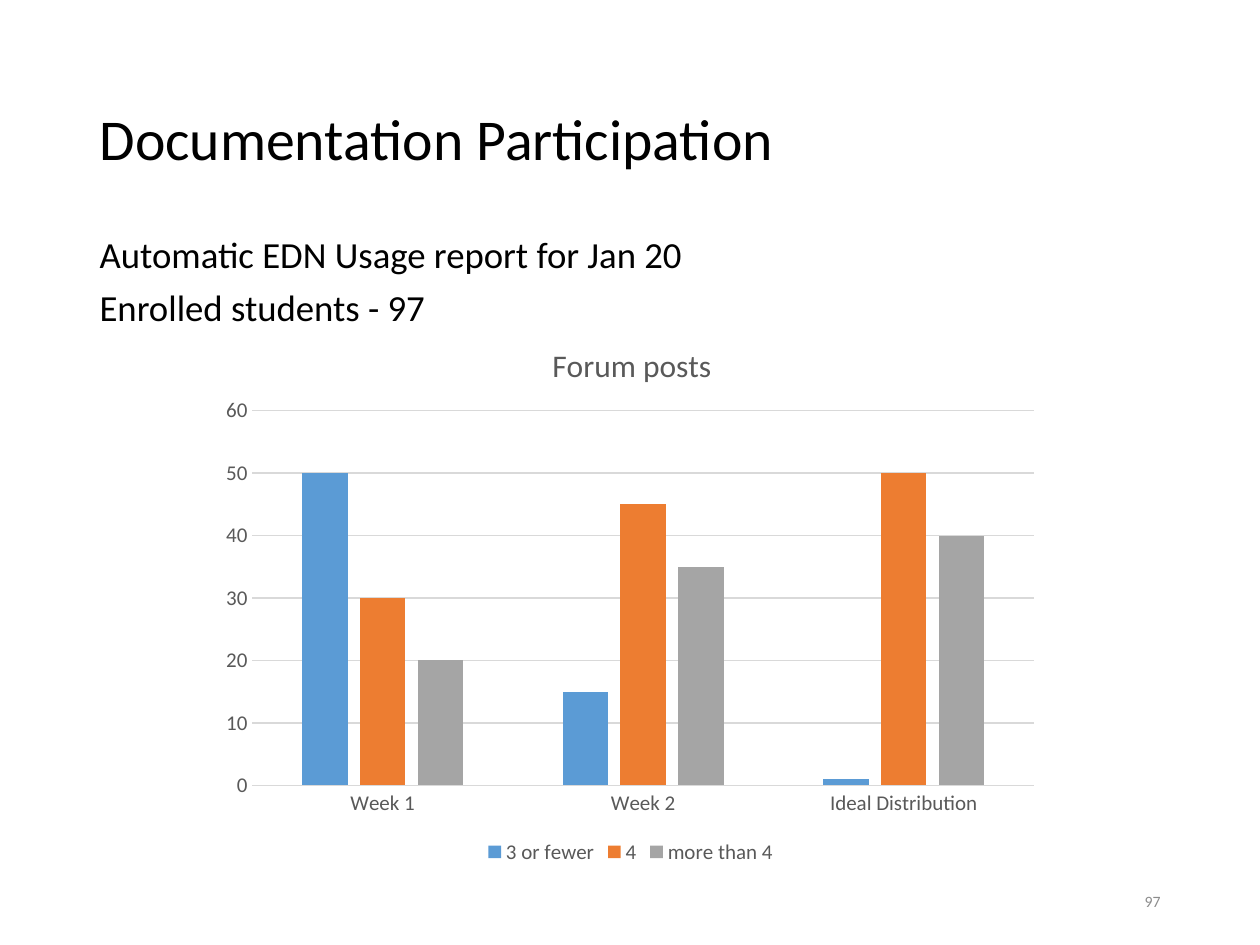
from lxml import etree
from pptx import Presentation
from pptx.chart.data import CategoryChartData
from pptx.dml.color import RGBColor
from pptx.enum.chart import XL_CHART_TYPE as ChartType, XL_LEGEND_POSITION as LegendPosition
from pptx.enum.chart import XL_TICK_MARK as TickMark
from pptx.enum.text import MSO_ANCHOR as Anchor, MSO_AUTO_SIZE as AutoSize, PP_ALIGN as Align
from pptx.oxml import parse_xml
from pptx.oxml.ns import nsdecls, qn
from pptx.util import Inches, Pt

TITLE = "Documentation Participation"
FACTS = ["Automatic EDN Usage report for Jan 20", "Enrolled students - 97"]
PAGE_NUMBER = "97"
CHART_TITLE = "Forum posts"
PERIODS = ["Week 1", "Week 2", "Ideal Distribution"]
POSTS = [
    ("3 or fewer", "5B9BD5", (50, 15, 1)),
    ("4", "ED7D31", (30, 45, 50)),
    ("more than 4", "A5A5A5", (20, 35, 40)),
]
FONT, BLACK, GRAY, RULE = "Calibri", "000000", "595959", "D9D9D9"


def color(target, value):
    """Color a font directly, or give a fill a solid color."""
    if hasattr(target, "solid"):
        target.solid()
        target.fore_color.rgb = RGBColor.from_string(value)
    else:
        target.color.rgb = RGBColor.from_string(value)


def style(font, size, value):
    font.name, font.size, font.bold = FONT, Pt(size), False
    color(font, value)


def place(shape, left, top, width, height):
    shape.left, shape.top = Inches(left), Inches(top)
    shape.width, shape.height = Inches(width), Inches(height)


def fill_text(shape, lines, size, value, align=Align.LEFT, anchor=Anchor.MIDDLE):
    frame = shape.text_frame
    frame.text = "\n".join(lines)
    frame.word_wrap, frame.auto_size = True, AutoSize.NONE
    frame.vertical_anchor = anchor
    for paragraph in frame.paragraphs:
        paragraph.alignment = align
        style(paragraph.runs[0].font, size, value)
    return frame.paragraphs


def manual_layout(**parts):
    """Chart layout in fractions of the chart area."""
    tags = "".join(f'<c:{key} val="{value}"/>' for key, value in parts.items())
    return parse_xml(f'<c:layout {nsdecls("c")}><c:manualLayout>{tags}</c:manualLayout></c:layout>')


def set_layout(parent, layout, index):
    for old in parent.findall(qn("c:layout")):
        parent.remove(old)
    parent.insert(index, layout)


def add_posts_chart(slide):
    data = CategoryChartData()
    data.categories = PERIODS
    for name, _, values in POSTS:
        data.add_series(name, values)
    chart = slide.shapes.add_chart(
        ChartType.COLUMN_CLUSTERED, Inches(1.67), Inches(2.46), Inches(6.67), Inches(4.44), data
    ).chart
    style(chart.font, 10, BLACK)

    chart.has_title = True
    heading = chart.chart_title
    heading.text_frame.text = CHART_TITLE
    style(heading.text_frame.paragraphs[0].runs[0].font, 18, GRAY)
    heading.include_in_layout = False
    set_layout(heading.format.fill and heading._element,
               manual_layout(xMode="edge", yMode="edge", x=0.4, y=0.05), 1)

    chart.has_legend = True
    chart.legend.position = LegendPosition.BOTTOM
    chart.legend.include_in_layout = False
    style(chart.legend.font, 12, GRAY)

    for axis in (chart.category_axis, chart.value_axis):
        axis.major_tick_mark = axis.minor_tick_mark = TickMark.NONE
        style(axis.tick_labels.font, 12, GRAY)
    chart.value_axis.format.line.fill.background()
    chart.value_axis.minimum_scale, chart.value_axis.maximum_scale = 0, 60
    chart.value_axis.major_unit = 10
    for line in (chart.category_axis.format.line, chart.value_axis.major_gridlines.format.line):
        color(line.fill, RULE)
        line.width = Pt(0.75)

    plot = chart.plots[0]
    plot.gap_width, plot.overlap, plot.vary_by_categories = 219, -27, False
    for series, (_, value, _) in zip(plot.series, POSTS):
        color(series.format.fill, value)
    plot_area = chart._chartSpace.find(".//" + qn("c:plotArea"))
    set_layout(plot_area, manual_layout(layoutTarget="inner", xMode="edge", yMode="edge",
                                        x=0.05, y=0.18, w=0.93, h=0.67), 0)


def main():
    deck = Presentation()
    deck.slide_width, deck.slide_height = Inches(10), Inches(7.5)
    slide = deck.slides.add_slide(deck.slide_layouts[1])

    title, body = slide.placeholders
    place(title, 0.69, 0.4, 8.62, 1.45)
    fill_text(title, [TITLE], 33, BLACK)[0].line_spacing = 0.9

    place(body, 0.69, 1.83, 8.62, 5.01)
    for fact in fill_text(body, FACTS, 21, BLACK, anchor=Anchor.TOP):
        fact.line_spacing, fact.space_before = 0.9, Pt(7.5)
        properties = fact._p.get_or_add_pPr()
        properties.set("marL", "0")
        properties.set("indent", "0")
        etree.SubElement(properties, qn("a:buNone"))

    number = slide.shapes.add_textbox(Inches(7.06), Inches(6.95), Inches(2.25), Inches(0.4))
    fill_text(number, [PAGE_NUMBER], 9, "8C8C8C", align=Align.RIGHT)

    add_posts_chart(slide)
    deck.save("out.pptx")


if __name__ == "__main__":
    main()
